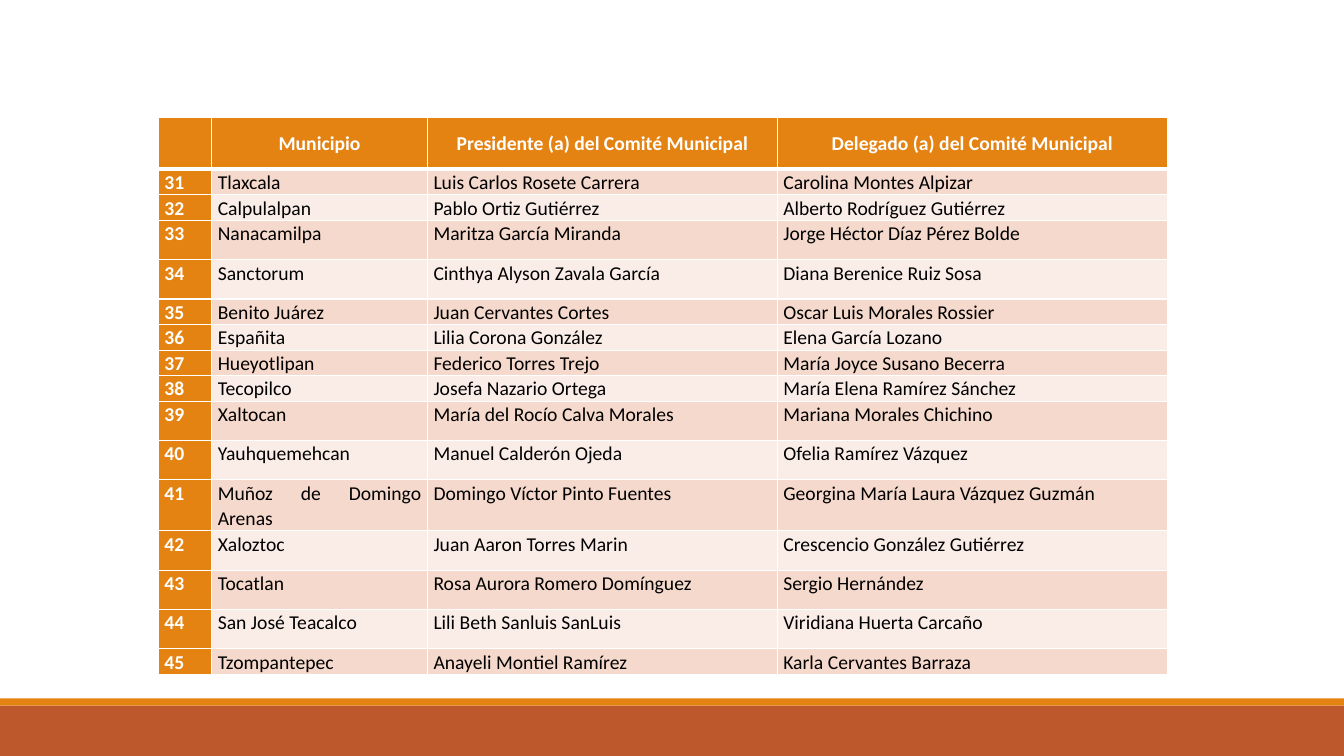
from lxml.etree import SubElement
from pptx import Presentation
from pptx.dml.color import RGBColor
from pptx.enum.shapes import MSO_SHAPE as Shape
from pptx.enum.text import MSO_ANCHOR as Anchor, PP_ALIGN as Align
from pptx.oxml.ns import qn
from pptx.util import Inches, Pt

COLORS = {"orange": "E48312", "rust": "BD582C", "white": "FFFFFF",
          "black": "000000", "dark_band": "F5D9CC", "light_band": "FAEDE7"}
HEADER = ("", "Municipio", "Presidente (a) del Comité Municipal",
          "Delegado (a) del Comité Municipal")
FIRST_NUMBER = 31
SHORT, TALL = 0.2, 0.39
COMMITTEES = [
    ("Tlaxcala", "Luis Carlos Rosete Carrera", "Carolina Montes Alpizar", SHORT),
    ("Calpulalpan", "Pablo Ortiz Gutiérrez", "Alberto Rodríguez Gutiérrez", SHORT),
    ("Nanacamilpa", "Maritza García Miranda", "Jorge Héctor Díaz Pérez Bolde", TALL),
    ("Sanctorum", "Cinthya Alyson Zavala García", "Diana Berenice Ruiz Sosa", TALL),
    ("Benito Juárez", "Juan Cervantes Cortes", "Oscar Luis Morales Rossier", SHORT),
    ("Españita", "Lilia Corona González", "Elena García Lozano", SHORT),
    ("Hueyotlipan", "Federico Torres Trejo", "María Joyce Susano Becerra", SHORT),
    ("Tecopilco", "Josefa Nazario Ortega", "María Elena Ramírez Sánchez", SHORT),
    ("Xaltocan", "María del Rocío Calva Morales", "Mariana Morales Chichino", TALL),
    ("Yauhquemehcan", "Manuel Calderón Ojeda", "Ofelia Ramírez Vázquez", TALL),
    ("Muñoz de Domingo Arenas", "Domingo Víctor Pinto Fuentes",
     "Georgina María Laura Vázquez Guzmán", TALL),
    ("Xaloztoc", "Juan Aaron Torres Marin", "Crescencio González Gutiérrez", TALL),
    ("Tocatlan", "Rosa Aurora Romero Domínguez", "Sergio Hernández", TALL),
    ("San José Teacalco", "Lili Beth Sanluis SanLuis", "Viridiana Huerta Carcaño", TALL),
    ("Tzompantepec", "Anayeli Montiel Ramírez", "Karla Cervantes Barraza", SHORT),
]
FOOTER_BANDS = [("rust", 7, 0.5), ("orange", 6.93, 0.07)]
SLIDE_WIDTH, SLIDE_HEIGHT = 13.33, 7.5
TABLE_LEFT, TABLE_TOP = 1.57, 1.16
COLUMN_WIDTHS = (0.53, 2.14, 3.47, 3.87)
HEADER_HEIGHT = 0.52
CELL_MARGINS = {"margin_left": Inches(0.06), "margin_right": Inches(0.06),
                "margin_top": 0, "margin_bottom": 0}


def color(name):
    return RGBColor.from_string(COLORS[name])


def add_footer(slide):
    for name, top, height in FOOTER_BANDS:
        band = slide.shapes.add_shape(Shape.RECTANGLE, 0, Inches(top),
                                      Inches(SLIDE_WIDTH), Inches(height))
        band.shadow.inherit = False
        band.fill.solid()
        band.fill.fore_color.rgb = color(name)
        band.line.fill.background()


def set_borders(cell, widths):
    properties = cell._tc.get_or_add_tcPr()
    for side, width in widths.items():
        line = SubElement(properties, qn(f"a:ln{side}"), w=str(Pt(width)))
        fill = SubElement(line, qn("a:solidFill"))
        SubElement(fill, qn("a:srgbClr"), val=COLORS["white"])


def format_cell(cell, text, row, column):
    is_header, is_number = row == 0, column == 0
    is_accent = is_header or is_number
    set_borders(cell, {"L": 1, "R": 1, "T": 3 if row == 1 else 1,
                       "B": 3 if is_header else 1})
    band = "dark_band" if row % 2 else "light_band"
    cell.fill.solid()
    cell.fill.fore_color.rgb = color("orange" if is_accent else band)
    for name, value in CELL_MARGINS.items():
        setattr(cell, name, value)
    cell.vertical_anchor = Anchor.MIDDLE if is_header else Anchor.TOP
    cell.text = text
    paragraph = cell.text_frame.paragraphs[0]
    paragraph.line_spacing = 1.07
    paragraph.alignment = (Align.CENTER if is_header
                           else Align.LEFT if is_number else Align.JUSTIFY)
    font = paragraph.font
    if paragraph.runs:
        font = paragraph.runs[0].font
    font_format = {"name": "Calibri", "size": Pt(14), "bold": is_accent}
    for name, value in font_format.items():
        setattr(font, name, value)
    font.color.rgb = color("white" if is_accent else "black")


def add_committee_table(slide):
    rows = [HEADER] + [(str(number), *names) for number, (*names, _)
                       in enumerate(COMMITTEES, FIRST_NUMBER)]
    heights = [HEADER_HEIGHT] + [committee[-1] for committee in COMMITTEES]
    table = slide.shapes.add_table(
        len(rows), len(HEADER), Inches(TABLE_LEFT), Inches(TABLE_TOP),
        Inches(sum(COLUMN_WIDTHS)), Inches(sum(heights))).table
    for column, width in zip(table.columns, COLUMN_WIDTHS):
        column.width = Inches(width)
    for row, height in zip(table.rows, heights):
        row.height = Inches(height)
    for row, texts in enumerate(rows):
        for column, text in enumerate(texts):
            format_cell(table.cell(row, column), text, row, column)


def main():
    presentation = Presentation()
    presentation.slide_width = Inches(SLIDE_WIDTH)
    presentation.slide_height = Inches(SLIDE_HEIGHT)
    slide = presentation.slides.add_slide(presentation.slide_layouts[6])
    add_footer(slide)
    add_committee_table(slide)
    presentation.save("out.pptx")


if __name__ == "__main__":
    main()
